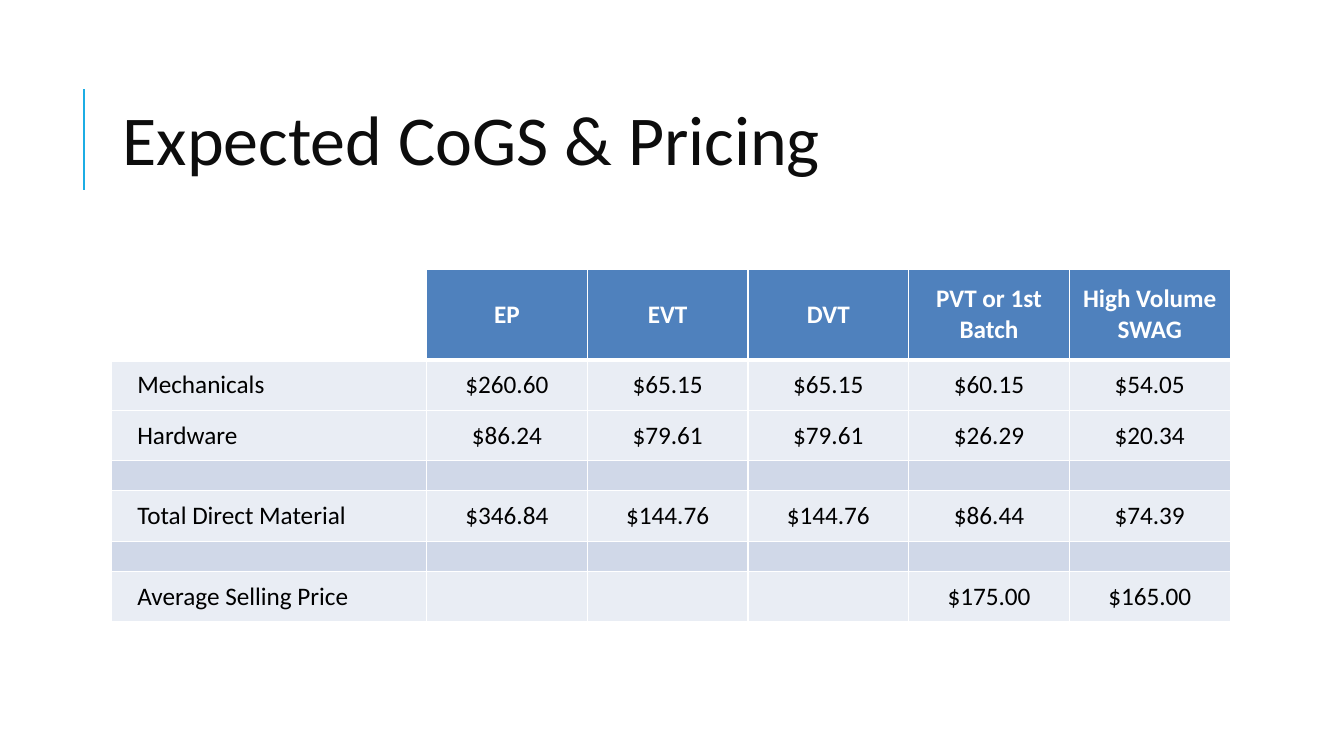
from lxml import etree
from pptx import Presentation
from pptx.dml.color import RGBColor
from pptx.enum import shapes, text
from pptx.oxml import ns
from pptx.util import Cm, Pt

ACCENT = RGBColor(0x1C, 0xAD, 0xE4)
TITLE = RGBColor(0x0D, 0x0D, 0x0D)
BLACK = RGBColor(0x00, 0x00, 0x00)
WHITE = RGBColor(0xFF, 0xFF, 0xFF)
HEADER = RGBColor(0x4F, 0x81, 0xBD)
LIGHT = RGBColor(0xE9, 0xED, 0xF4)
SPACER = RGBColor(0xD0, 0xD8, 0xE8)

ROWS = [
    ["", "EP", "EVT", "DVT", "PVT or 1st Batch", "High Volume SWAG"],
    ["Mechanicals", "$260.60", "$65.15", "$65.15", "$60.15", "$54.05"],
    ["Hardware", "$86.24", "$79.61", "$79.61", "$26.29", "$20.34"],
    [""] * 6,
    ["Total Direct Material", "$346.84", "$144.76", "$144.76", "$86.44", "$74.39"],
    [""] * 6,
    ["Average Selling Price", "", "", "", "$175.00", "$165.00"],
]
HEADER_HEIGHT, ROW_HEIGHT, SPACER_HEIGHT = Cm(2.29), Cm(1.27), Cm(0.76)
LABEL_WIDTH, VALUE_WIDTH = Cm(7.93), Cm(4.05)


def write(frame, words, size=18, color=BLACK, bold=False, align=text.PP_ALIGN.LEFT, spacing=1.0):
    para = frame.paragraphs[0]
    para.alignment = align
    para.line_spacing = spacing
    if not words:
        # An empty paragraph takes its height from its end mark.
        etree.SubElement(para._p, ns.qn("a:endParaRPr"), sz=str(size * 100))
        return
    span = para.add_run()
    span.text = words
    span.font.name = "Calibri"
    span.font.size = Pt(size)
    span.font.bold = bold
    span.font.color.rgb = color


def add_borders(cell, bottom):
    """Draw white borders; this must come before the cell's fill."""
    properties = cell._tc.get_or_add_tcPr()
    for side, points in (("L", 1), ("R", 1), ("T", 1), ("B", bottom)):
        line = etree.SubElement(properties, ns.qn(f"a:ln{side}"), w=str(Pt(points)))
        fill = etree.SubElement(line, ns.qn("a:solidFill"))
        etree.SubElement(fill, ns.qn("a:srgbClr"), val=str(WHITE))


deck = Presentation()
deck.slide_width, deck.slide_height = Cm(33.87), Cm(19.05)
page = deck.slides.add_slide(deck.slide_layouts[6])

# Title with its accent line
accent = page.shapes.add_connector(
    shapes.MSO_CONNECTOR.STRAIGHT, Cm(2.12), Cm(4.78), Cm(2.12), Cm(2.24))
accent.line.color.rgb = ACCENT
accent.line.width = Pt(1.5)
etree.SubElement(accent._element.spPr, ns.qn("a:effectLst"))

title = page.shapes.add_textbox(Cm(2.84), Cm(1.57), Cm(27), Cm(4.17)).text_frame
title.word_wrap = True
title.vertical_anchor = text.MSO_ANCHOR.MIDDLE
write(title, "Expected CoGS & Pricing", size=50, color=TITLE, spacing=0.8)

# Cost table
table = page.shapes.add_table(
    len(ROWS), len(ROWS[0]), Cm(2.82), Cm(6.78), Cm(28.18), Cm(8.89)).table
table.first_row = False
table.horz_banding = False
for number, column in enumerate(table.columns):
    column.width = VALUE_WIDTH if number else LABEL_WIDTH

for row_number, values in enumerate(ROWS):
    is_header = row_number == 0
    is_spacer = not any(values)
    table.rows[row_number].height = (
        HEADER_HEIGHT if is_header else SPACER_HEIGHT if is_spacer else ROW_HEIGHT)
    for column_number, value in enumerate(values):
        is_label = column_number == 0
        cell = table.cell(row_number, column_number)
        add_borders(cell, bottom=3 if is_header else 1)
        if is_header and is_label:
            cell.fill.background()
        else:
            cell.fill.solid()
            cell.fill.fore_color.rgb = HEADER if is_header else SPACER if is_spacer else LIGHT
        cell.vertical_anchor = text.MSO_ANCHOR.MIDDLE
        cell.margin_left = Cm(0.64) if is_label else 0
        cell.margin_right = cell.margin_top = cell.margin_bottom = 0
        write(cell.text_frame, value,
              size=18 if value else 12,
              color=WHITE if is_header else BLACK,
              bold=is_header,
              align=text.PP_ALIGN.LEFT if is_label else text.PP_ALIGN.CENTER)

deck.save("out.pptx")
